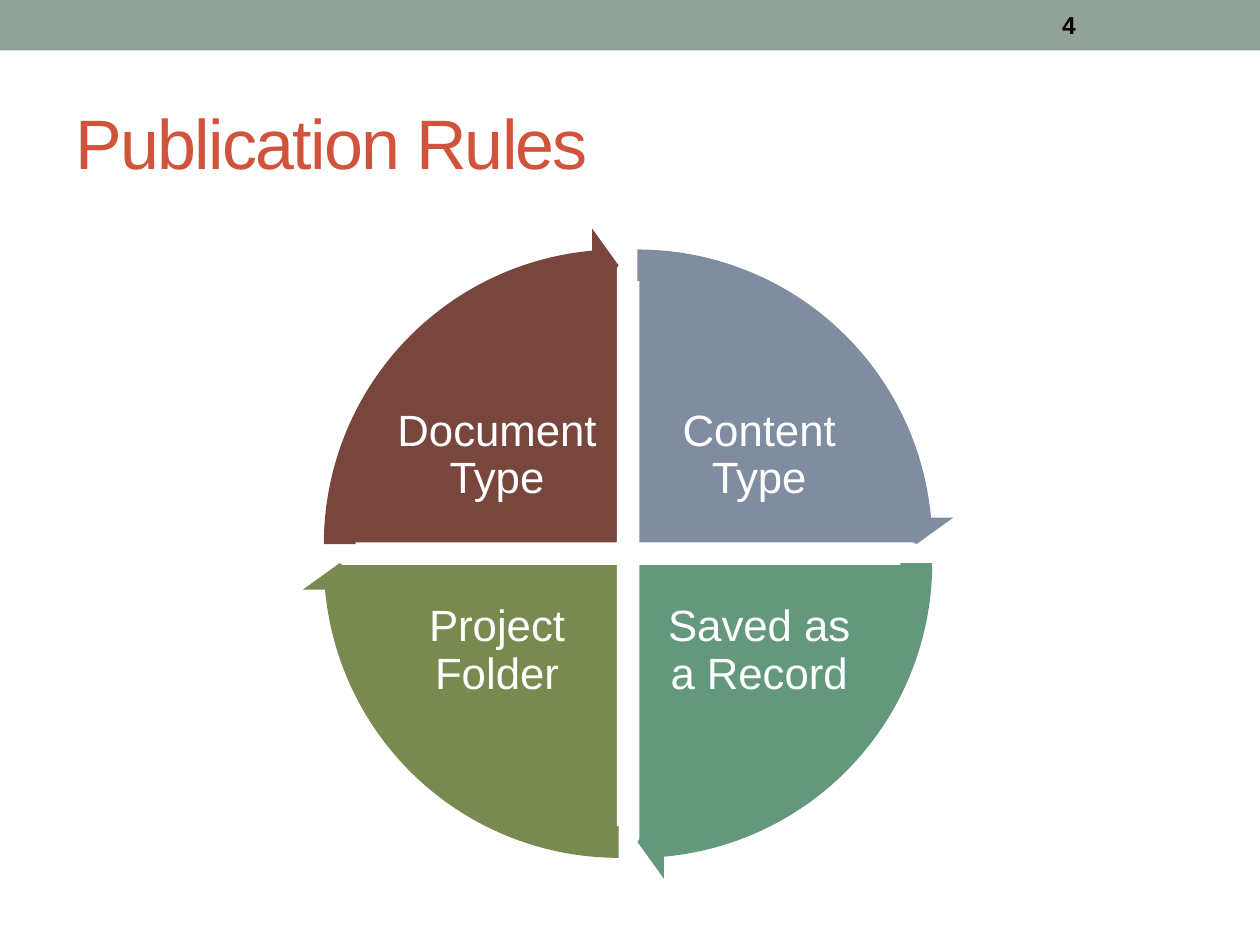
from pptx import Presentation
from pptx.dml.color import RGBColor
from pptx.enum.shapes import MSO_SHAPE
from pptx.enum.text import MSO_ANCHOR, PP_ALIGN
from pptx.util import Pt

COLOURS = {
    "band": "93A299", "title": "D2533C", "white": "FFFFFF", "black": "000000",
    "content": "808DA0", "record": "64987C", "folder": "788A50", "document": "79463D",
}
QUARTER, FULL_TURN = 54, 216
WHEEL_X, WHEEL_Y, WHEEL_GAP = 358.9, 316.4, 5.4
PIE_SIZE, ARROW_SIZE = 322.56, 362.2
LABEL_X, LABEL_Y, LABEL_W, LABEL_H = 74.9, 55.8, 118.8, 88.6


def apply(target, values):
    for name, value in values.items():
        setattr(target, name, value)


def centred(x, y, width, height):
    return x - width / 2, y - height / 2, width, height


class SlideWriter:
    font_name = "Arial"

    def __init__(self, slide):
        self.slide = slide

    def colour(self, name):
        return RGBColor.from_string(COLOURS[name])

    def shape(self, preset, box, fill, adjustments=(), outline=None):
        shape = self.slide.shapes.add_shape(preset, *map(Pt, box))
        shape.shadow.inherit = False
        shape.fill.solid()
        shape.fill.fore_color.rgb = self.colour(fill)
        if outline:
            shape.line.color.rgb = self.colour(outline)
            shape.line.width = Pt(2.08)
        else:
            shape.line.fill.background()
        for index, value in enumerate(adjustments):
            shape.adjustments[index] = value

    def text(self, wording, box, size, colour, frame=None, paragraph=None, font=None, spacing=None):
        text_frame = self.slide.shapes.add_textbox(*map(Pt, box)).text_frame
        apply(text_frame, {"word_wrap": True, "vertical_anchor": MSO_ANCHOR.MIDDLE, **(frame or {})})
        line = text_frame.paragraphs[0]
        apply(line, paragraph or {})
        run = line.add_run()
        run.text = wording
        apply(run.font, {"name": self.font_name, "size": Pt(size), **(font or {})})
        run.font.color.rgb = self.colour(colour)
        if spacing is not None:
            run.font._element.set("spc", str(spacing))

    def slice(self, x, y, start, fill):
        end = (start + QUARTER) % FULL_TURN
        self.shape(MSO_SHAPE.PIE, centred(x, y, PIE_SIZE, PIE_SIZE), fill, (start, end), "white")

    def label(self, wording, x, y):
        insets = {f"margin_{side}": Pt(2.2) for side in ("left", "top", "right", "bottom")}
        self.text(wording, centred(x, y, LABEL_W, LABEL_H), 25, "white", insets,
                  {"alignment": PP_ALIGN.CENTER, "line_spacing": 0.9})

    def arrow(self, x, y, start, fill):
        self.shape(MSO_SHAPE.CIRCULAR_ARROW, centred(x, y, ARROW_SIZE, ARROW_SIZE), fill,
                   (0.05, 3.27, start + 50.73, start, 0.06))


def main():
    presentation = Presentation()
    apply(presentation, {"slide_width": Pt(720), "slide_height": Pt(540)})
    writer = SlideWriter(presentation.slides.add_slide(presentation.slide_layouts[6]))

    writer.shape(MSO_SHAPE.RECTANGLE, (0, 0, 720, 28.8), "band")
    writer.text("Publication Rules", (36, 41.8, 648, 77.8), 40, "title", spacing=-100)

    rules = [
        ("Content Type", "content", 1, -1, 162),
        ("Saved as a Record", "record", 1, 1, 0),
        ("Project Folder", "folder", -1, 1, 54),
        ("Document Type", "document", -1, -1, 108),
    ]
    for wording, fill, right, down, start in rules:
        writer.slice(WHEEL_X + right * WHEEL_GAP, WHEEL_Y + down * WHEEL_GAP, start, fill)
        writer.label(wording, WHEEL_X + right * LABEL_X, WHEEL_Y + down * LABEL_Y)
    for _, fill, right, down, start in rules:
        writer.arrow(WHEEL_X + right * WHEEL_GAP, WHEEL_Y + down * WHEEL_GAP, start, fill)

    writer.text("4", (599.8, 1.4, 84.2, 25.9), 14, "black", font={"bold": True})
    presentation.save("out.pptx")


if __name__ == "__main__":
    main()
